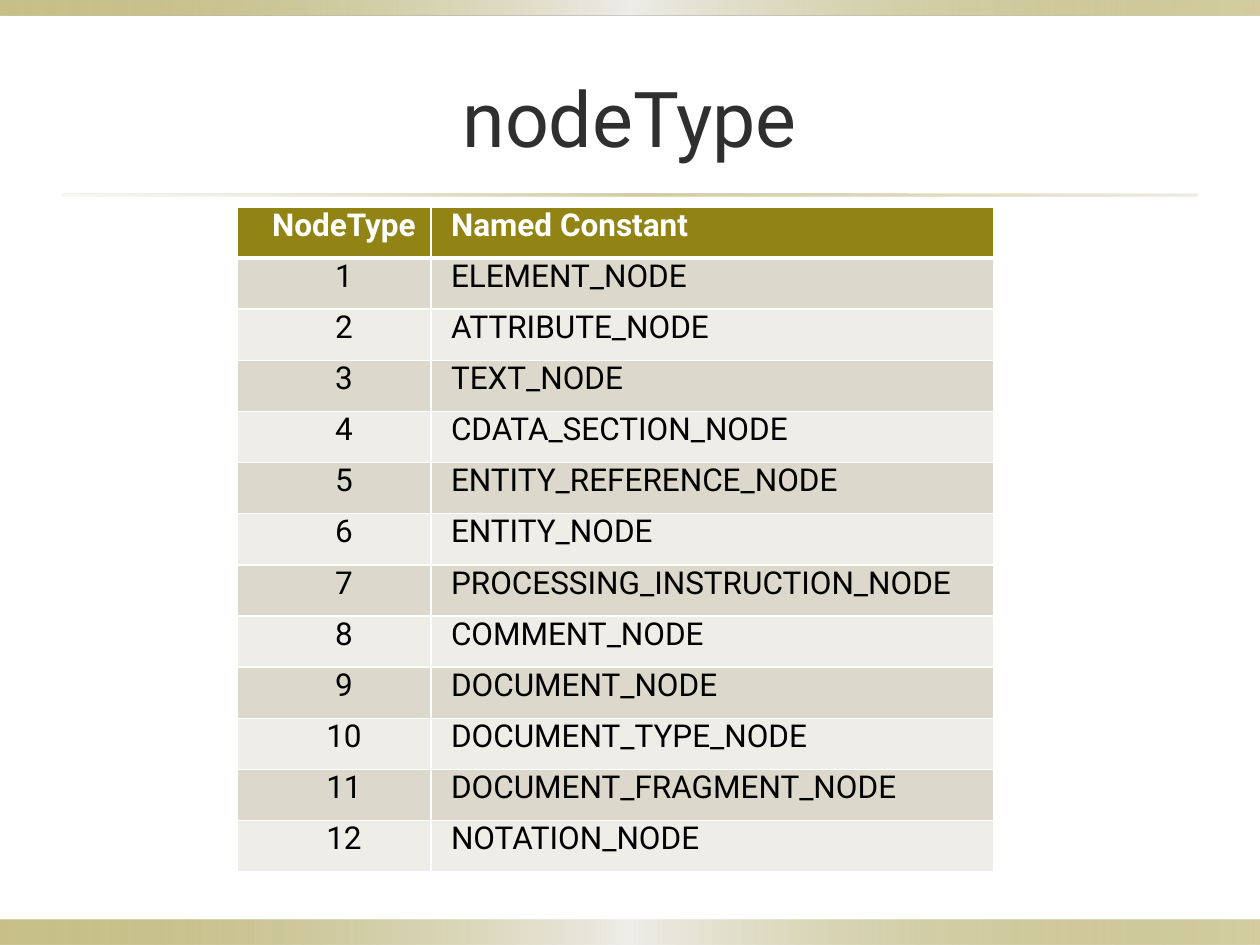
from lxml.etree import SubElement
from pptx import Presentation
from pptx.dml.color import RGBColor
from pptx.enum.shapes import MSO_SHAPE
from pptx.enum.text import MSO_ANCHOR, PP_ALIGN
from pptx.oxml.ns import qn
from pptx.util import Pt

FONT = "Roboto"
OLIVE = RGBColor(0x91, 0x84, 0x15)
SAND = RGBColor(0xDC, 0xD9, 0xCC)
PALE = RGBColor(0xEE, 0xED, 0xE7)
MIST = RGBColor(0xEE, 0xED, 0xE8)
DARK = RGBColor(0x2F, 0x2F, 0x2F)
BLACK = RGBColor(0, 0, 0)
WHITE = RGBColor(255, 255, 255)

NAMES = [
    "ELEMENT_NODE", "ATTRIBUTE_NODE", "TEXT_NODE", "CDATA_SECTION_NODE",
    "ENTITY_REFERENCE_NODE", "ENTITY_NODE", "PROCESSING_INSTRUCTION_NODE",
    "COMMENT_NODE", "DOCUMENT_NODE", "DOCUMENT_TYPE_NODE",
    "DOCUMENT_FRAGMENT_NODE", "NOTATION_NODE",
]


def add_bar(left, top, width, height, stops):
    """Add a left-to-right gradient bar; stops are (place, colour, opacity) in percent."""
    bar = slide.shapes.add_shape(
        MSO_SHAPE.RECTANGLE, Pt(left), Pt(top), Pt(width), Pt(height))
    bar.shadow.inherit = False
    bar.line.fill.background()
    bar.fill.gradient()
    bar.fill.gradient_angle = 0
    ramp = next(bar.element.iter(qn("a:gsLst")))
    ramp.clear()
    for place, color, alpha in stops:
        stop = SubElement(ramp, qn("a:gs"), pos=str(place * 1000))
        tint = SubElement(stop, qn("a:srgbClr"), val=str(color))
        SubElement(tint, qn("a:alpha"), val=str(alpha * 1000))


def set_edge(cell, side, width):
    edge = SubElement(cell._tc.get_or_add_tcPr(), qn("a:ln" + side),
                      w=str(Pt(width)))
    fill = SubElement(edge, qn("a:solidFill"))
    SubElement(fill, qn("a:srgbClr"), val=str(WHITE))


deck = Presentation()
deck.slide_width, deck.slide_height = Pt(720), Pt(540)
slide = deck.slides.add_slide(deck.slide_layouts[6])

# Bands at the edges and the rule below the title
band = [(0, OLIVE, 50), (50, MIST, 100), (100, OLIVE, 40)]
add_bar(0, 525.6, 720, 14.4, band)
add_bar(0, 0, 720, 8.64, band)
add_bar(36, 110.88, 648, 1.44,
        [(0, SAND, 20), (50, OLIVE, 40), (100, SAND, 50)])

# Title
title = slide.shapes.add_textbox(Pt(36), Pt(21.6), Pt(648), Pt(90))
frame = title.text_frame
frame.word_wrap = True
frame.vertical_anchor = MSO_ANCHOR.MIDDLE
para = frame.paragraphs[0]
para.text = "nodeType"
para.alignment = PP_ALIGN.CENTER
para.font.name, para.font.size = FONT, Pt(44)
para.font.color.rgb = DARK

# Table of node types
rows = [("NodeType", "Named Constant")]
rows += [(str(n), name) for n, name in enumerate(NAMES, 1)]
table = slide.shapes.add_table(
    len(rows), 2, Pt(135.36), Pt(118.2), Pt(432.72), Pt(29.24 * len(rows))).table
table.columns[0].width, table.columns[1].width = Pt(110.88), Pt(321.84)

for r, row in enumerate(rows):
    table.rows[r].height = Pt(29.24)
    head = r == 0
    for c, text in enumerate(row):
        cell = table.cell(r, c)
        cell.margin_left = Pt(11.52)
        cell.margin_top = cell.margin_right = cell.margin_bottom = 0
        for side in "LRTB":
            thick = (r, side) in ((0, "B"), (1, "T"))
            set_edge(cell, side, 3 if thick else 1)
        cell.fill.solid()
        cell.fill.fore_color.rgb = OLIVE if head else SAND if r % 2 else PALE
        para = cell.text_frame.paragraphs[0]
        para.text = text
        para.alignment = PP_ALIGN.LEFT if c else PP_ALIGN.CENTER
        para.font.name, para.font.size = FONT, Pt(18)
        para.font.bold = head
        para.font.color.rgb = WHITE if head else BLACK

deck.save("out.pptx")
